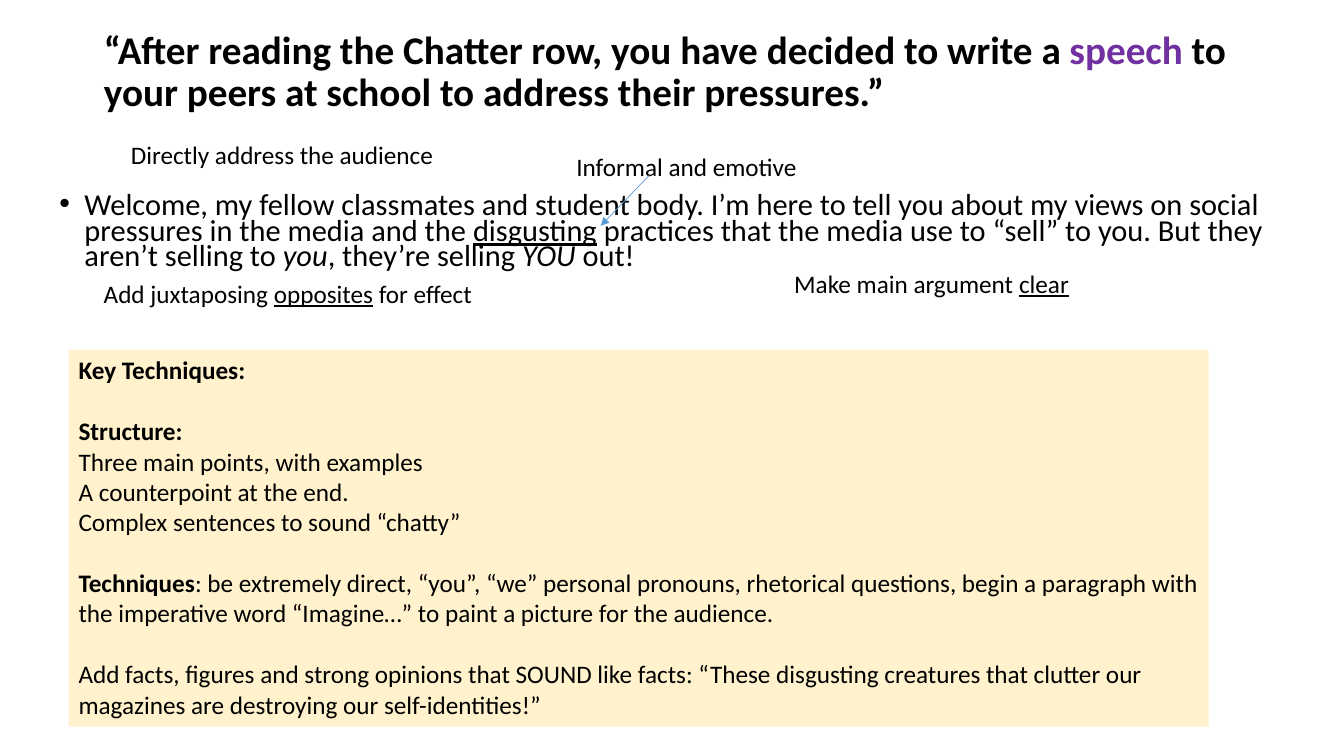
from lxml import etree
from pptx import Presentation
from pptx.dml.color import RGBColor
from pptx.enum.shapes import MSO_CONNECTOR, MSO_SHAPE
from pptx.enum.text import MSO_ANCHOR, MSO_AUTO_SIZE, PP_ALIGN
from pptx.oxml.ns import qn
from pptx.util import Pt

LEFT = PP_ALIGN.LEFT
TOP, MIDDLE = MSO_ANCHOR.TOP, MSO_ANCHOR.MIDDLE
NO_FIT = MSO_AUTO_SIZE.NONE
RECT = MSO_SHAPE.RECTANGLE
STRAIGHT = MSO_CONNECTOR.STRAIGHT

FONT = "Calibri"
COLORS = {"text": "000000", "accent": "7030A0", "panel": "FFF2CC", "arrow": "5B9BD5"}
NOTE_SIZE = 18
NOTE_HEIGHT = 29
SECTION_GAP = 22

TITLE = [
    ("“After reading the Chatter row, you have decided to write a ", "b"),
    ("speech", "b", "accent"),
    (" to your peers at school to address their pressures.”", "b"),
]
SPEECH = [
    ("Welcome, my fellow classmates and student body. I’m here to tell you about "
     "my views on social pressures in the media and the ",),
    ("disgusting", "u"),
    (" practices that the media use to “sell” to you. But they aren’t selling to ",),
    ("you", "i"),
    (", they’re selling ",),
    ("YOU", "i"),
    (" out!",),
]
NOTES = [
    ((86.4, 95.8, 263.5), [("Directly address the audience",)]),
    ((560.2, 187.9, 231.1), [("Make main argument ",), ("clear", "u")]),
    ((67, 195.1, 326.2), [("Add juxtaposing ",), ("opposites", "u"), (" for effect",)]),
    ((404.6, 104.4, 182.9), [("Informal and emotive",)]),
]
TECHNIQUES = [
    [[("Key Techniques:", "b")]],
    [
        [("Structure:", "b")],
        [("Three main points, with examples",)],
        [("A counterpoint at the end.",)],
        [("Complex sentences to sound “chatty”",)],
    ],
    [[
        ("Techniques", "b"),
        (": be extremely direct, “you”, “we” personal pronouns, rhetorical questions, "
         "begin a paragraph with the imperative word “Imagine…” to paint a picture "
         "for the audience.",),
    ]],
    [[("Add facts, figures and strong opinions that SOUND like facts: “These disgusting "
       "creatures that clutter our magazines are destroying our self-identities!”",)]],
]


def rgb(name):
    return RGBColor.from_string(COLORS[name])


def add_runs(p, runs, size):
    p.alignment = LEFT
    for text, style, color in ((*run, "", "text")[:3] if len(run) == 1
                               else (*run, "text")[:3] for run in runs):
        r = p.add_run()
        r.text = text
        font = r.font
        font.name = FONT
        font.size = Pt(size)
        font.bold = "b" in style
        font.italic = "i" in style
        font.underline = "u" in style
        font.color.rgb = rgb(color)


def prepare(tf, anchor=TOP):
    tf.word_wrap = True
    tf.auto_size = NO_FIT
    tf.vertical_anchor = anchor
    return tf


def add_box(s, box):
    return prepare(s.shapes.add_textbox(*map(Pt, box)).text_frame)


def add_title(s, box):
    sp = s.shapes.title
    sp.left, sp.top, sp.width, sp.height = map(Pt, box)
    p = prepare(sp.text_frame, MIDDLE).paragraphs[0]
    p.line_spacing = 0.9
    add_runs(p, TITLE, 28)


def add_speech(s, box):
    p = add_box(s, box).paragraphs[0]
    p.line_spacing = 0.7
    pPr = p._p.get_or_add_pPr()
    pPr.set("marL", str(Pt(18)))
    pPr.set("indent", str(-Pt(18)))
    etree.SubElement(pPr, qn("a:buFont")).set("typeface", "Arial")
    etree.SubElement(pPr, qn("a:buChar")).set("char", "•")
    add_runs(p, SPEECH, 21.7)


def add_note(s, box, runs):
    add_runs(add_box(s, box).paragraphs[0], runs, NOTE_SIZE)


def add_techniques(s, box):
    sp = s.shapes.add_shape(RECT, *map(Pt, box))
    sp.shadow.inherit = False
    sp.fill.solid()
    sp.fill.fore_color.rgb = rgb("panel")
    sp.line.fill.background()
    tf = prepare(sp.text_frame)
    for i, section in enumerate(TECHNIQUES):
        for j, runs in enumerate(section):
            first = i == 0 and j == 0
            p = tf.paragraphs[0] if first else tf.add_paragraph()
            if i and j == 0:
                p.space_before = Pt(SECTION_GAP)
            add_runs(p, runs, NOTE_SIZE)


def add_arrow(s, start, end):
    line = s.shapes.add_connector(STRAIGHT, *map(Pt, (*start, *end)))
    line.line.color.rgb = rgb("arrow")
    line.line.width = Pt(0.5)
    etree.SubElement(line.line._get_or_add_ln(), qn("a:tailEnd")).set("type", "triangle")
    etree.SubElement(line._element.spPr, qn("a:effectLst"))


def main():
    prs = Presentation()
    prs.slide_width, prs.slide_height = Pt(960), Pt(540)
    s = prs.slides.add_slide(prs.slide_layouts[5])
    add_title(s, (67, 0, 828, 104.4))
    add_speech(s, (35.3, 136.1, 892, 66.2))
    add_techniques(s, (49, 249.8, 814.3, 269.3))
    for place, runs in NOTES:
        add_note(s, (*place, NOTE_HEIGHT), runs)
    add_arrow(s, (463.7, 125.3), (429.1, 161.3))
    prs.save("out.pptx")


if __name__ == "__main__":
    main()
